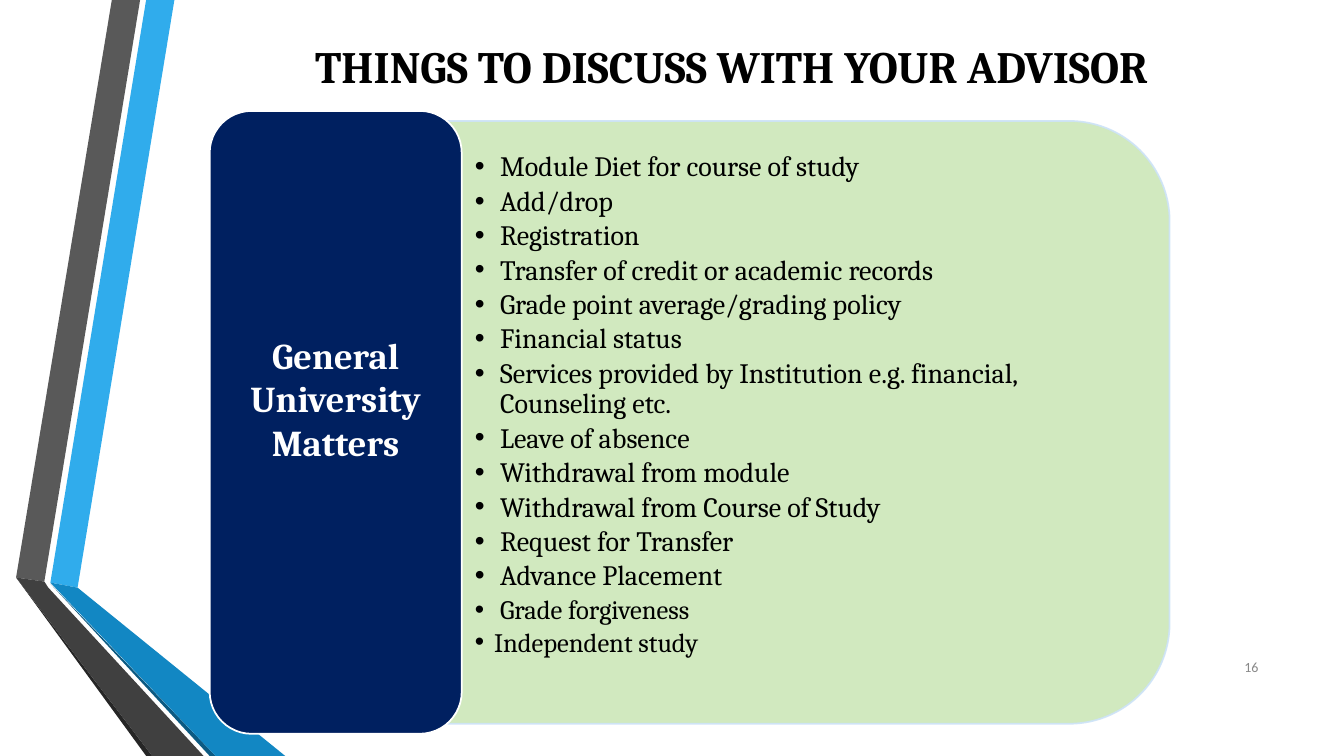
from dataclasses import dataclass, field
from typing import Any

from lxml.etree import SubElement
from pptx import Presentation
from pptx.dml.color import RGBColor
from pptx.enum.shapes import MSO_SHAPE
from pptx.enum.text import MSO_ANCHOR, PP_ALIGN
from pptx.oxml.ns import qn
from pptx.util import Pt

PX = 9144
SERIF = "Cambria"


@dataclass(frozen=True)
class Ribbon:
    color: str
    points: list[tuple[int, int]]


@dataclass(frozen=True)
class Panel:
    kind: MSO_SHAPE
    frame: tuple[int, int, int, int]
    fill: str
    line: str
    rotation: int = 0
    opacity: int = 100


@dataclass(frozen=True)
class Line:
    text: str
    size: int
    color: str = "000000"
    font: str = SERIF
    bold: bool = False
    indent: int = 0
    paragraph: dict[str, Any] = field(default_factory=dict)


RIBBONS = [
    Ribbon("30ACEC", [(50, 578), (77, 583), (173, 0), (145, 0)]),
    Ribbon("595959", [(139, 0), (111, 0), (16, 573), (44, 577)]),
    Ribbon("262626", [(16, 573), (145, 750), (151, 750)]),
    Ribbon("0C5A82", [(50, 579), (208, 750), (214, 750)]),
    Ribbon("1287C3", [(50, 578), (214, 750), (283, 750), (77, 583)]),
    Ribbon("404040", [(202, 750), (48, 583), (44, 577), (16, 573), (151, 750)]),
]

TOPICS_PANEL = Panel(MSO_SHAPE.ROUND_2_SAME_RECTANGLE, (503, 61, 598, 716),
                     "CCE7B9", "CDE3F8", rotation=90, opacity=90)
LABEL_PANEL = Panel(MSO_SHAPE.ROUNDED_RECTANGLE, (208, 110, 250, 618),
                    "002060", "FFFFFF")

TOPICS = [
    "Module Diet for course of study",
    "Add/drop",
    "Registration",
    "Transfer of credit or academic records",
    "Grade point average/grading policy",
    "Financial status",
    "Services provided by Institution e.g. financial, Counseling etc.",
    "Leave of absence",
    "Withdrawal from module",
    "Withdrawal from Course of Study",
    "Request for Transfer",
    "Advance Placement",
]
CENTERED = {"alignment": PP_ALIGN.CENTER}
TOPIC_SPACING = {"line_spacing": 0.9, "space_after": Pt(3)}


def rgb(color: str) -> RGBColor:
    return RGBColor.from_string(color)


def apply_format(target: Any, values: dict[str, Any]) -> None:
    for name, value in values.items():
        setattr(target, name, value)


def paint(shape: Any, color: str, opacity: int = 100) -> None:
    shape.shadow.inherit = False
    shape.fill.solid()
    shape.fill.fore_color.rgb = rgb(color)
    if opacity < 100:
        for value in shape._element.spPr.iter(qn("a:srgbClr")):
            SubElement(value, qn("a:alpha"), val=str(opacity * 1000))


def draw_ribbon(page: Any, ribbon: Ribbon) -> None:
    builder = page.shapes.build_freeform(*ribbon.points[0], scale=PX)
    builder.add_line_segments(ribbon.points[1:], close=True)
    shape = builder.convert_to_shape()
    shape.line.fill.background()
    paint(shape, ribbon.color)


def draw_panel(page: Any, panel: Panel) -> Any:
    shape = page.shapes.add_shape(panel.kind, *(side * PX for side in panel.frame))
    shape.rotation = panel.rotation
    shape.line.color.rgb = rgb(panel.line)
    shape.line.width = Pt(1.25)
    paint(shape, panel.fill, panel.opacity)
    return shape


def add_bullet(para: Any, indent: int) -> None:
    properties = para._p.get_or_add_pPr()
    properties.set("marL", str(indent * PX))
    properties.set("indent", str(-indent * PX))
    SubElement(properties, qn("a:buFont"), typeface="Arial")
    SubElement(properties, qn("a:buChar"), char="•")


def write_lines(shape: Any, lines: list[Line],
                insets: tuple[int, int, int, int] = (10, 5, 10, 5)) -> None:
    frame = shape.text_frame
    sides = ("margin_left", "margin_top", "margin_right", "margin_bottom")
    apply_format(frame, {"word_wrap": True, "vertical_anchor": MSO_ANCHOR.MIDDLE})
    apply_format(frame, {side: inset * PX for side, inset in zip(sides, insets)})
    for number, line in enumerate(lines):
        para = frame.add_paragraph() if number else frame.paragraphs[0]
        apply_format(para, line.paragraph)
        if line.indent:
            add_bullet(para, line.indent)
        span = para.add_run()
        span.text = line.text
        apply_format(span.font, {"size": Pt(line.size), "name": line.font,
                                 "bold": line.bold})
        span.font.color.rgb = rgb(line.color)


def add_box(page: Any, left: int, top: int, width: int, height: int) -> Any:
    return page.shapes.add_textbox(left * PX, top * PX, width * PX, height * PX)


def main() -> None:
    deck = Presentation()
    apply_format(deck, {"slide_width": 1333 * PX, "slide_height": 750 * PX})
    page = deck.slides.add_slide(deck.slide_layouts[6])

    for ribbon in RIBBONS:
        draw_ribbon(page, ribbon)

    title = Line("THINGS TO DISCUSS WITH YOUR ADVISOR", 32, bold=True,
                 paragraph=CENTERED)
    write_lines(add_box(page, 178, 0, 1096, 130), [title])

    draw_panel(page, TOPICS_PANEL)
    topics = [Line(topic, 20, indent=25, paragraph=TOPIC_SPACING)
              for topic in TOPICS]
    topics += [Line(topic, 19, indent=indent, paragraph=TOPIC_SPACING)
               for topic, indent in (("Grade forgiveness", 25),
                                     ("Independent study", 19))]
    write_lines(add_box(page, 444, 149, 687, 506), topics, (27, 14, 27, 14))

    label = Line("General University Matters", 26, "FFFFFF", bold=True,
                 paragraph=CENTERED)
    write_lines(draw_panel(page, LABEL_PANEL), [label], (11, 5, 11, 53))

    number = Line("16", 10, "898989", "Calibri",
                  paragraph={"alignment": PP_ALIGN.RIGHT})
    write_lines(add_box(page, 1198, 642, 60, 40), [number])

    deck.save("out.pptx")


if __name__ == "__main__":
    main()
